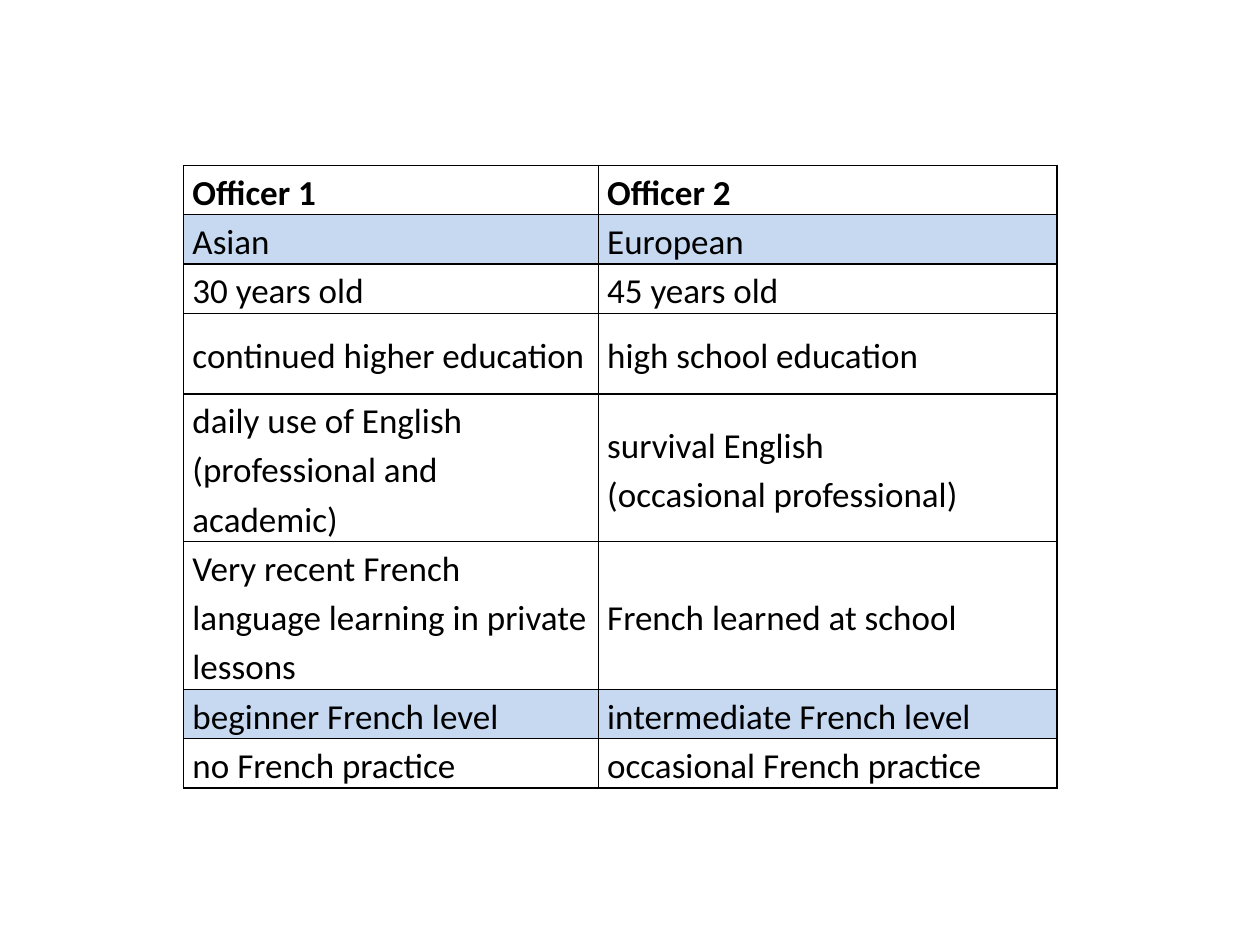
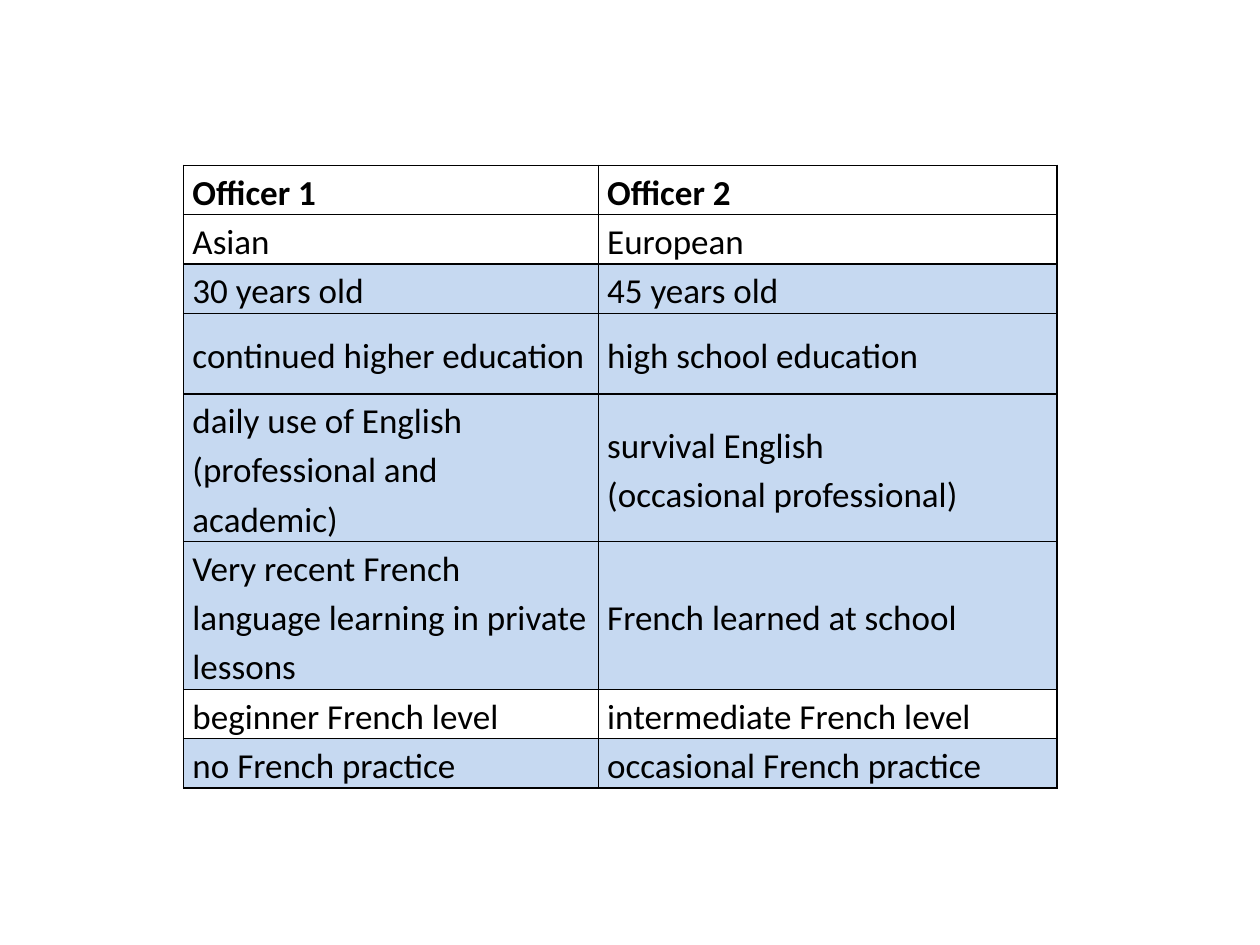
from dataclasses import dataclass

from lxml import etree
from pptx import Presentation
from pptx.dml.color import RGBColor
from pptx.enum import text as txt
from pptx.oxml import ns
from pptx.util import Pt


@dataclass(frozen=True)
class Theme:
    font: str = "Calibri"
    size: float = 20
    ink: str = "000000"
    mark: str = "C6D9F1"
    rule: float = 1
    lead: float = 1.15
    inset: float = 5


THEME = Theme()
BOX = (105, 94.5, 499, 338)
COLS = (237, 262)
ROWS = (23, 23, 23, 46, 70, 70, 23, 23)
TRAITS = (
    ("Officer 1", "Officer 2"),
    ("Asian", "European"),
    ("30 years old", "45 years old"),
    ("continued higher education", "high school education"),
    ("daily use of English\n(professional and academic)",
     "survival English\n(occasional professional)"),
    ("Very recent French language learning in private lessons",
     "French learned at school"),
    ("beginner French level", "intermediate French level"),
    ("no French practice", "occasional French practice"),
)
# Rows marked on each slide
MARKS = ({1, 6}, {2, 3, 4, 5, 7})


def write(frame, words, bold=False, size=THEME.size, color=THEME.ink):
    frame.text = words
    for para in frame.paragraphs:
        para.line_spacing = THEME.lead
        for run in para.runs:
            font = run.font
            font.name, font.size, font.bold = THEME.font, Pt(size), bold
            font.color.rgb = RGBColor.from_string(color)


def edge(cell):
    """Rule all four sides of a cell."""
    props = cell._tc.get_or_add_tcPr()
    for side in "LRTB":
        line = etree.SubElement(props, ns.qn(f"a:ln{side}"), w=str(Pt(THEME.rule)))
        fill = etree.SubElement(line, ns.qn("a:solidFill"))
        etree.SubElement(fill, ns.qn("a:srgbClr"), val=THEME.ink)


def style(cell, marked):
    cell.margin_left = cell.margin_right = Pt(THEME.inset)
    cell.margin_top = cell.margin_bottom = 0
    cell.vertical_anchor = txt.MSO_ANCHOR.MIDDLE
    edge(cell)
    if marked:
        cell.fill.solid()
        cell.fill.fore_color.rgb = RGBColor.from_string(THEME.mark)
    else:
        cell.fill.background()


def compare(slide, box, marks):
    """Set the two officers side by side, with the marked rows tinted."""
    frame = slide.shapes.add_table(len(ROWS), len(COLS), *map(Pt, box))
    table = frame.table
    table.first_row = table.horz_banding = False
    for col, width in zip(table.columns, COLS):
        col.width = Pt(width)
    for row, height in zip(table.rows, ROWS):
        row.height = Pt(height)
    frame.height = Pt(box[3])
    for r, pair in enumerate(TRAITS):
        for c, words in enumerate(pair):
            cell = table.cell(r, c)
            style(cell, r in marks)
            write(cell.text_frame, words, bold=r == 0)


def main():
    deck = Presentation()
    deck.slide_width, deck.slide_height = Pt(720), Pt(540)
    blank = deck.slide_layouts[6]
    for marks in MARKS:
        compare(deck.slides.add_slide(blank), BOX, marks)
    deck.save("out.pptx")


if __name__ == "__main__":
    main()
